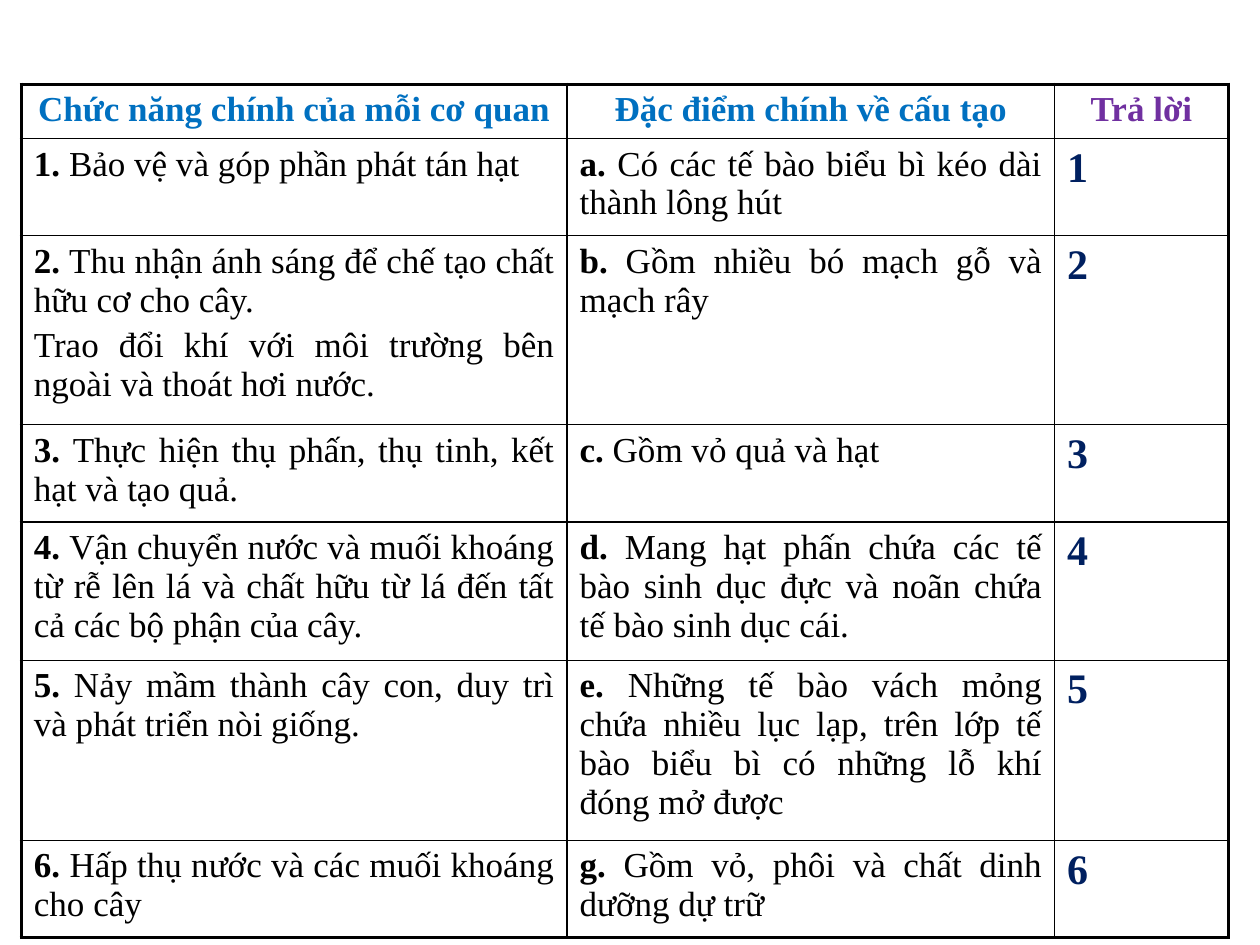
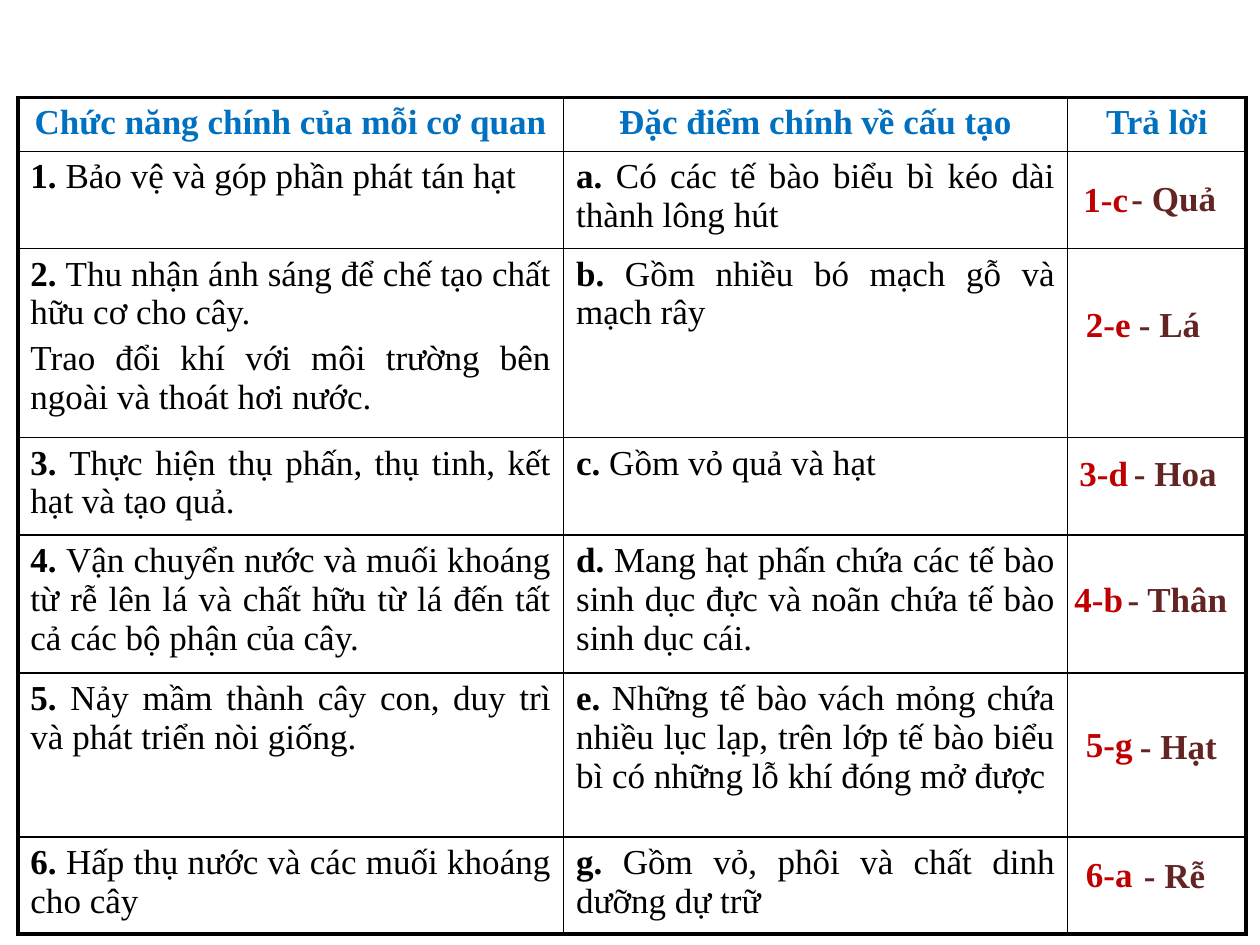
from lxml import etree
from pptx import Presentation
from pptx.dml.color import RGBColor
from pptx.enum.text import MSO_AUTO_SIZE, PP_ALIGN
from pptx.oxml.ns import qn
from pptx.util import Cm, Pt

CENTER, JUSTIFY, LEFT = PP_ALIGN.CENTER, PP_ALIGN.JUSTIFY, PP_ALIGN.LEFT
FIT_SHAPE = MSO_AUTO_SIZE.SHAPE_TO_FIT_TEXT

FONT = "Times New Roman"
BLACK = RGBColor(0x00, 0x00, 0x00)
BLUE = RGBColor(0x00, 0x70, 0xC0)
PURPLE = RGBColor(0x70, 0x30, 0xA0)
NAVY = RGBColor(0x00, 0x20, 0x60)
RED = RGBColor(0xC0, 0x00, 0x00)
BROWN = RGBColor(0x63, 0x25, 0x23)
INNER_LINE, OUTER_LINE = Pt(1), Pt(2.25)

HEADERS = ["Chức năng chính của mỗi cơ quan", "Đặc điểm chính về cấu tạo", "Trả lời"]
ROWS = [
    (["1. Bảo vệ và góp phần phát tán hạt"],
     ["a. Có các tế bào biểu bì kéo dài thành lông hút"]),
    (["2. Thu nhận ánh sáng để chế tạo chất hữu cơ cho cây.",
      "Trao đổi khí với môi trường bên ngoài và thoát hơi nước."],
     ["b. Gồm nhiều bó mạch gỗ và mạch rây"]),
    (["3. Thực hiện thụ phấn, thụ tinh, kết hạt và tạo quả."],
     ["c. Gồm vỏ quả và hạt"]),
    (["4. Vận chuyển nước và muối khoáng từ rễ lên lá và chất hữu từ lá đến tất cả "
      "các bộ phận của cây."],
     ["d. Mang hạt phấn chứa các tế bào sinh dục đực và noãn chứa tế bào sinh dục cái."]),
    (["5. Nảy mầm thành cây con, duy trì và phát triển nòi giống."],
     ["e. Những tế bào vách mỏng chứa nhiều lục lạp, trên lớp tế bào biểu bì có những "
      "lỗ khí đóng mở được"]),
    (["6. Hấp thụ nước và các muối khoáng cho cây"],
     ["g. Gồm vỏ, phôi và chất dinh dưỡng dự trữ"]),
]
NUMBERS = [str(number) for number in range(1, len(ROWS) + 1)]

# One entry per slide: left, top, column widths, height of row 5, colour of the
# last header and the contents of the answer column
TABLES = [
    (0.43, 1.7, [11, 9.83, 3.5], 3.63, PURPLE, NUMBERS),
    (0.36, 1.96, [11, 10.16, 3.6], 3.3, BLUE, [""] * len(ROWS)),
]

# Text, left, top, width of the matched pair and of the organ name
ANSWERS = [
    (("1-c", 21.59, 3.45, 1.47), ("- Quả", 22.56, 3.43, 2.24)),
    (("2-e", 21.64, 5.97, 1.47), ("- Lá", 22.71, 5.97, 1.75)),
    (("3-d", 21.51, 8.97, 2.11), ("- Hoa", 22.61, 8.97, 2.18)),
    (("4-b", 21.41, 11.51, 1.7), ("- Thân", 22.48, 11.51, 2.54)),
    (("5-g", 21.64, 14.45, 1.7), ("- Hạt", 22.73, 14.48, 2.08)),
    (("6-a", 21.64, 17.07, 1.7), ("- Rễ", 22.81, 17.09, 1.75)),
]


def add_span(para, text, color, bold=True, size=20):
    span = para.add_run()
    span.text = text
    span.font.name = FONT
    span.font.size = Pt(size)
    span.font.bold = bold
    span.font.color.rgb = color


def style_cell(cell, on_edge):
    """Draw the four borders, thicker on the table's edge, and clear the fill."""
    properties = cell._tc.get_or_add_tcPr()
    for side in ("L", "R", "T", "B"):
        width = OUTER_LINE if on_edge[side] else INNER_LINE
        line = etree.SubElement(properties, qn(f"a:ln{side}"), w=str(width))
        fill = etree.SubElement(line, qn("a:solidFill"))
        etree.SubElement(fill, qn("a:srgbClr"), val=str(BLACK))
    cell.fill.background()


deck = Presentation()
deck.slide_width, deck.slide_height = Cm(25.4), Cm(19.05)
blank_layout = deck.slide_layouts[6]

# Matching tables
for left, top, widths, row5_height, last_color, answers in TABLES:
    page = deck.slides.add_slide(blank_layout)
    heights = [1.09, 1.96, 3.81, 1.96, 2.79, row5_height, 1.96]
    table = page.shapes.add_table(
        len(heights), len(widths), Cm(left), Cm(top), Cm(sum(widths)), Cm(sum(heights))
    ).table
    table.first_row = table.horz_banding = False
    for column, width in zip(table.columns, widths):
        column.width = Cm(width)
    for row, height in zip(table.rows, heights):
        row.height = Cm(height)

    for r in range(len(heights)):
        for c in range(len(widths)):
            style_cell(table.cell(r, c), {"L": c == 0, "R": c == len(widths) - 1,
                                          "T": r == 0, "B": r == len(heights) - 1})

    # Header row
    for c, (header, color) in enumerate(zip(HEADERS, [BLUE, BLUE, last_color])):
        para = table.cell(0, c).text_frame.paragraphs[0]
        para.alignment = CENTER
        add_span(para, header, color)

    # Functions, structures and answers
    for r, (row_texts, answer) in enumerate(zip(ROWS, answers), start=1):
        for c, texts in enumerate(row_texts):
            frame = table.cell(r, c).text_frame
            for index, text in enumerate(texts):
                para = frame.add_paragraph() if index else frame.paragraphs[0]
                para.alignment = JUSTIFY
                if index:
                    para.space_before = Pt(4)
                    add_span(para, text, BLACK, bold=False)
                else:
                    label, _, body = text.partition(" ")
                    add_span(para, label + " ", BLACK)
                    add_span(para, body, BLACK, bold=False)
        if answer:
            para = table.cell(r, 2).text_frame.paragraphs[0]
            para.alignment = LEFT
            add_span(para, answer, NAVY, size=24)

# Answers laid over the last column of the second table
for part, (color, wrap) in enumerate([(RED, True), (BROWN, False)]):
    for answer in ANSWERS:
        text, left, top, width = answer[part]
        box = page.shapes.add_textbox(Cm(left), Cm(top), Cm(width), Cm(1.11))
        box.text_frame.word_wrap = wrap
        box.text_frame.auto_size = FIT_SHAPE
        add_span(box.text_frame.paragraphs[0], text, color)

deck.save("out.pptx")
